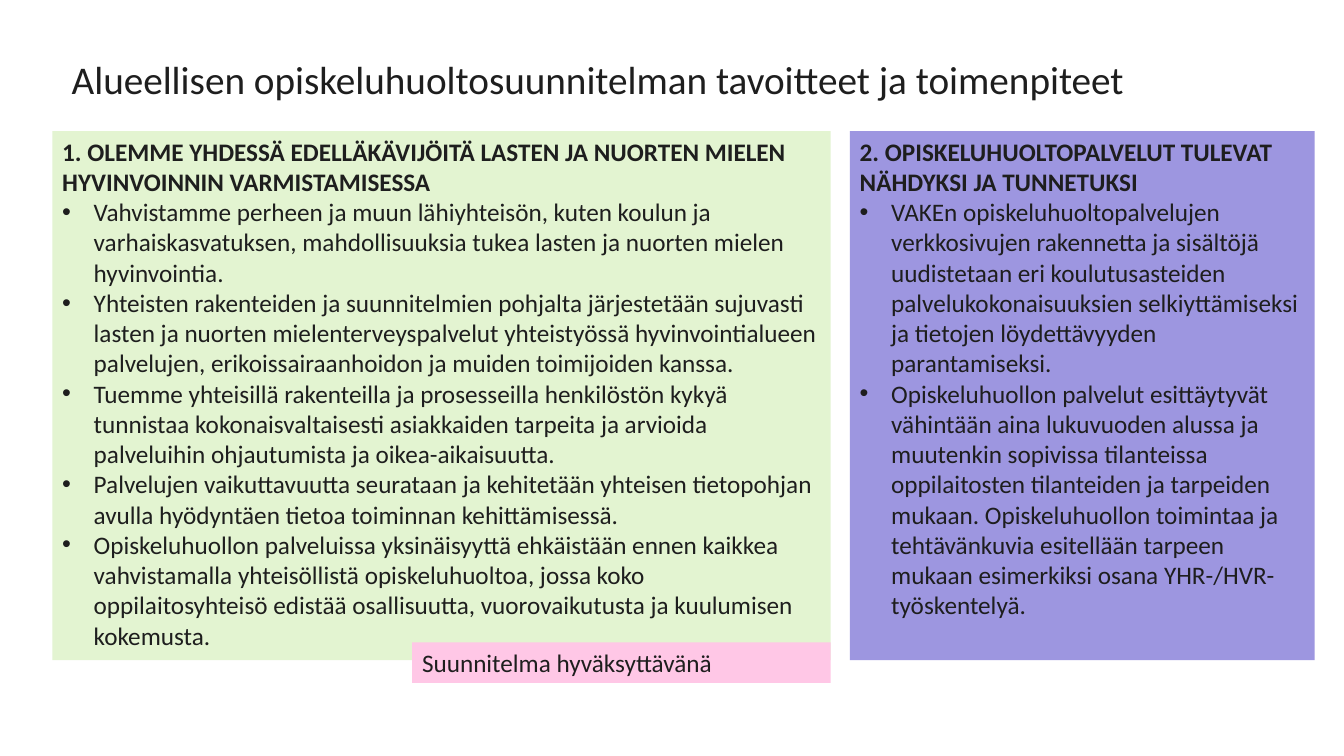
from lxml.etree import SubElement
from pptx import Presentation
from pptx.dml.color import RGBColor
from pptx.enum.shapes import MSO_SHAPE
from pptx.enum.text import MSO_ANCHOR, PP_ALIGN
from pptx.oxml.ns import qn
from pptx.util import Pt

COLORS = {"text": "1E1E1E", "green": "E3F4D1", "purple": "9D96E0", "pink": "FFC7E6"}

TITLE = "Alueellisen opiskeluhuoltosuunnitelman tavoitteet ja toimenpiteet"

WELLBEING_HEADING = (
    "1. OLEMME YHDESSÄ EDELLÄKÄVIJÖITÄ LASTEN JA NUORTEN MIELEN "
    "HYVINVOINNIN VARMISTAMISESSA"
)
WELLBEING_ACTIONS = [
    "Vahvistamme perheen ja muun lähiyhteisön, kuten koulun ja varhaiskasvatuksen, "
    "mahdollisuuksia tukea lasten ja nuorten mielen hyvinvointia.",
    "Yhteisten rakenteiden ja suunnitelmien pohjalta järjestetään sujuvasti lasten ja "
    "nuorten mielenterveyspalvelut yhteistyössä hyvinvointialueen palvelujen, "
    "erikoissairaanhoidon ja muiden toimijoiden kanssa.",
    "Tuemme yhteisillä rakenteilla ja prosesseilla henkilöstön kykyä tunnistaa "
    "kokonaisvaltaisesti asiakkaiden tarpeita ja arvioida palveluihin ohjautumista ja "
    "oikea-aikaisuutta.",
    "Palvelujen vaikuttavuutta seurataan ja kehitetään yhteisen tietopohjan avulla "
    "hyödyntäen tietoa toiminnan kehittämisessä.",
    "Opiskeluhuollon palveluissa yksinäisyyttä ehkäistään ennen kaikkea vahvistamalla "
    "yhteisöllistä opiskeluhuoltoa, jossa koko oppilaitosyhteisö edistää osallisuutta, "
    "vuorovaikutusta ja kuulumisen kokemusta.",
]
VISIBILITY_HEADING = "2. OPISKELUHUOLTOPALVELUT TULEVAT NÄHDYKSI JA TUNNETUKSI"
VISIBILITY_ACTIONS = [
    "VAKEn opiskeluhuoltopalvelujen verkkosivujen rakennetta ja sisältöjä uudistetaan "
    "eri koulutusasteiden palvelukokonaisuuksien selkiyttämiseksi ja tietojen "
    "löydettävyyden parantamiseksi.",
    "Opiskeluhuollon palvelut esittäytyvät vähintään aina lukuvuoden alussa ja muutenkin "
    "sopivissa tilanteissa oppilaitosten tilanteiden ja tarpeiden mukaan. "
    "Opiskeluhuollon toimintaa ja tehtävänkuvia esitellään tarpeen mukaan esimerkiksi "
    "osana YHR-/HVR-työskentelyä.",
]


class SlideBuilder:
    font_name = "Calibri"
    title_size = 28
    body_size = 18
    bullet_indent = 22.5

    def __init__(self, slide):
        self.slide = slide

    def set_text(self, paragraph, text, size, bold=False):
        paragraph.text = text
        font = paragraph.runs[0].font
        font.name = self.font_name
        font.size = Pt(size)
        font.bold = bold
        font.color.rgb = RGBColor.from_string(COLORS["text"])

    def add_title(self, text, left, top, width, height):
        title = self.slide.shapes.title
        title.left, title.top = Pt(left), Pt(top)
        title.width, title.height = Pt(width), Pt(height)
        title.text_frame.word_wrap = True
        title.text_frame.vertical_anchor = MSO_ANCHOR.BOTTOM
        paragraph = title.text_frame.paragraphs[0]
        paragraph.alignment = PP_ALIGN.LEFT
        paragraph.line_spacing = 0.9
        self.set_text(paragraph, text, self.title_size)

    def add_bullet(self, paragraph):
        properties = paragraph._p.get_or_add_pPr()
        properties.set("marL", str(Pt(self.bullet_indent)))
        properties.set("indent", str(-Pt(self.bullet_indent)))
        SubElement(properties, qn("a:buFont"), typeface="Arial")
        SubElement(properties, qn("a:buChar"), char="•")

    def add_panel(self, color, left, top, width, height, text, bullets=(), bold=False):
        """Add a filled rectangle with a first line and optional bullets below it."""
        panel = self.slide.shapes.add_shape(
            MSO_SHAPE.RECTANGLE, Pt(left), Pt(top), Pt(width), Pt(height)
        )
        panel.shadow.inherit = False
        panel.fill.solid()
        panel.fill.fore_color.rgb = RGBColor.from_string(COLORS[color])
        panel.line.fill.background()
        frame = panel.text_frame
        frame.word_wrap = True
        frame.vertical_anchor = MSO_ANCHOR.TOP
        heading = frame.paragraphs[0]
        heading.alignment = PP_ALIGN.LEFT
        self.set_text(heading, text, self.body_size, bold)
        for bullet in bullets:
            paragraph = frame.add_paragraph()
            paragraph.alignment = PP_ALIGN.LEFT
            self.add_bullet(paragraph)
            self.set_text(paragraph, bullet, self.body_size)


def main():
    presentation = Presentation()
    presentation.slide_width, presentation.slide_height = Pt(960), Pt(540)
    title_only = presentation.slide_layouts[5]
    builder = SlideBuilder(presentation.slides.add_slide(title_only))

    builder.add_title(TITLE, 44, 33, 808, 44)
    panel_top, panel_height = 93.6, 378
    builder.add_panel("purple", 607, panel_top, 332, panel_height,
                      VISIBILITY_HEADING, VISIBILITY_ACTIONS, bold=True)
    builder.add_panel("green", 37.4, panel_top, 556, panel_height,
                      WELLBEING_HEADING, WELLBEING_ACTIONS, bold=True)
    builder.add_panel("pink", 294.4, 458.8, 299, 29, "Suunnitelma hyväksyttävänä")

    presentation.save("out.pptx")


if __name__ == "__main__":
    main()
